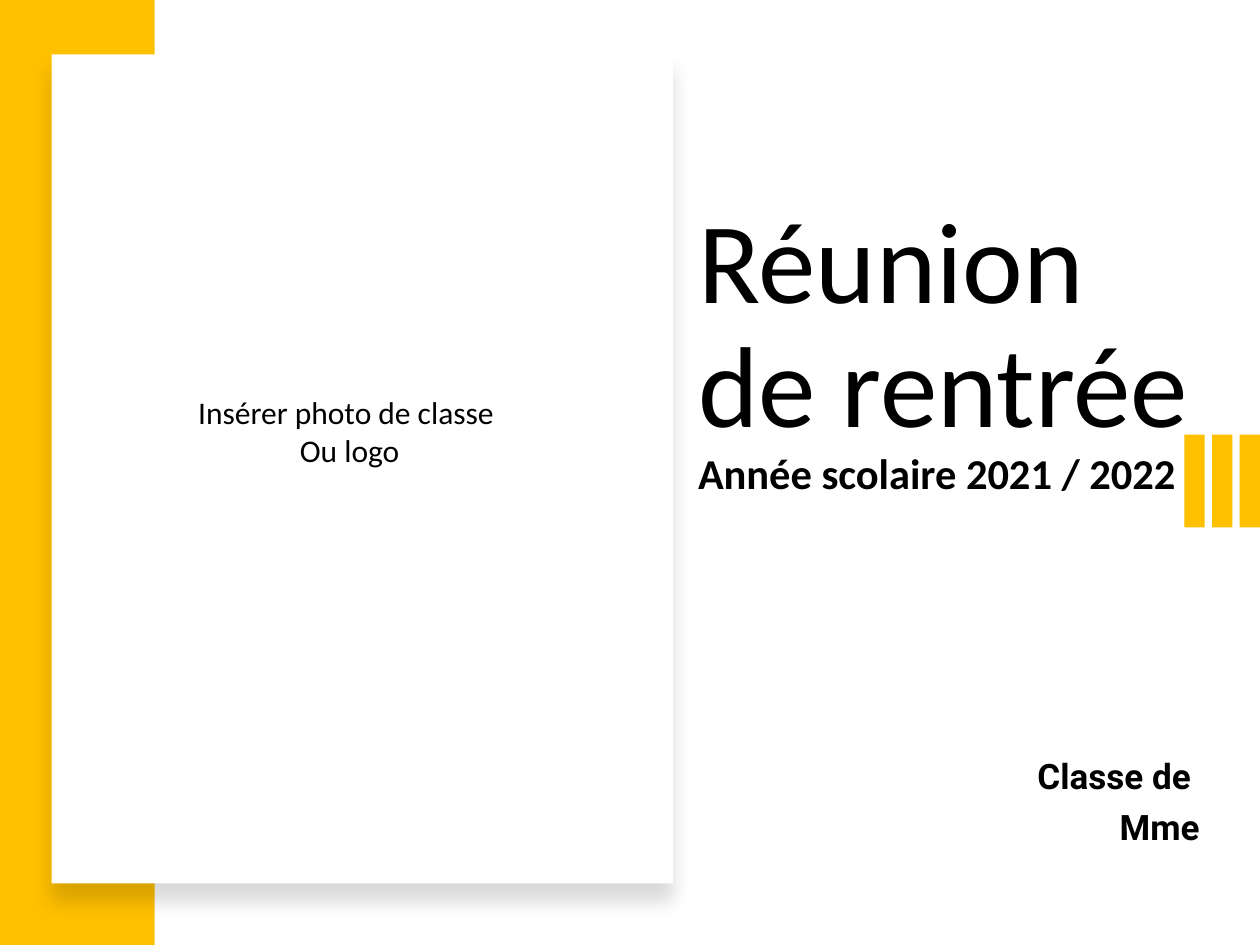
import pptx
import pptx.util
import pptx.dml.color
import pptx.enum.shapes
import pptx.enum.text
import pptx.oxml
import pptx.oxml.ns

Pt = pptx.util.Pt
ALIGN = pptx.enum.text.PP_ALIGN
ANCHOR = pptx.enum.text.MSO_ANCHOR
YELLOW = "FFC000"


def add_block(left, top, width, height, color):
    block = page.shapes.add_shape(
        pptx.enum.shapes.MSO_SHAPE.RECTANGLE, Pt(left), Pt(top), Pt(width), Pt(height))
    block.shadow.inherit = False
    block.fill.solid()
    block.fill.fore_color.rgb = pptx.dml.color.RGBColor.from_string(color)
    block.line.fill.background()
    return block


def style_paragraph(para, align, font, size, bold, spacing, before=0):
    para.alignment = align
    para.line_spacing = spacing
    para.space_before = Pt(before)
    for span in para.runs:
        span.font.name = font
        span.font.size = Pt(size)
        span.font.bold = bold
        span.font.color.rgb = pptx.dml.color.RGBColor.from_string("000000")


deck = pptx.Presentation()
deck.slide_width, deck.slide_height = Pt(720), Pt(540)
page = deck.slides.add_slide(deck.slide_layouts[5])

title = page.shapes.title
title.left, title.top, title.width, title.height = Pt(391.7), Pt(110), Pt(335.5), Pt(178.4)
frame = title.text_frame
frame.word_wrap = True
frame.auto_size = pptx.enum.text.MSO_AUTO_SIZE.NONE
frame.vertical_anchor = ANCHOR.BOTTOM
frame.text = "Réunion\vde rentrée\nAnnée scolaire 2021 / 2022"
for para, size, bold in zip(frame.paragraphs, (65.7, 24.3), (False, True)):
    style_paragraph(para, ALIGN.LEFT, "Calibri", size, bold, 0.9)

class_box = page.shapes.add_textbox(Pt(454.3), Pt(353.5), Pt(238.3), Pt(134.6))
frame = class_box.text_frame
frame.word_wrap = True
frame.vertical_anchor = ANCHOR.BOTTOM
frame.text = "Classe de \nMme"
for para in frame.paragraphs:
    style_paragraph(para, ALIGN.RIGHT, "Roboto", 20, True, 0.9, 7.5)

add_block(0, 0, 88.4, 540, YELLOW)

photo_card = add_block(29.5, 31, 355, 473.8, "FFFFFF")
effects = photo_card._element.spPr.find(pptx.oxml.ns.qn("a:effectLst"))
effects.append(pptx.oxml.parse_xml(
    f'<a:outerShdw {pptx.oxml.ns.nsdecls("a")} blurRad="{Pt(11)}" dist="{Pt(10)}" '
    'dir="5400000" algn="t" rotWithShape="0">'
    '<a:srgbClr val="000000"><a:alpha val="15000"/></a:srgbClr></a:outerShdw>'))

for index in range(3):
    add_block(676.8 + index * 15.8, 248.4, 11.6, 53, YELLOW)

photo_box = page.shapes.add_textbox(Pt(105), Pt(221), Pt(189.6), Pt(51))
frame = photo_box.text_frame
frame.word_wrap = False
frame.auto_size = pptx.enum.text.MSO_AUTO_SIZE.SHAPE_TO_FIT_TEXT
frame.text = "Insérer photo de classe \nOu logo"
for para in frame.paragraphs:
    style_paragraph(para, ALIGN.CENTER, "Calibri", 18, False, 1.0)

deck.save("out.pptx")
